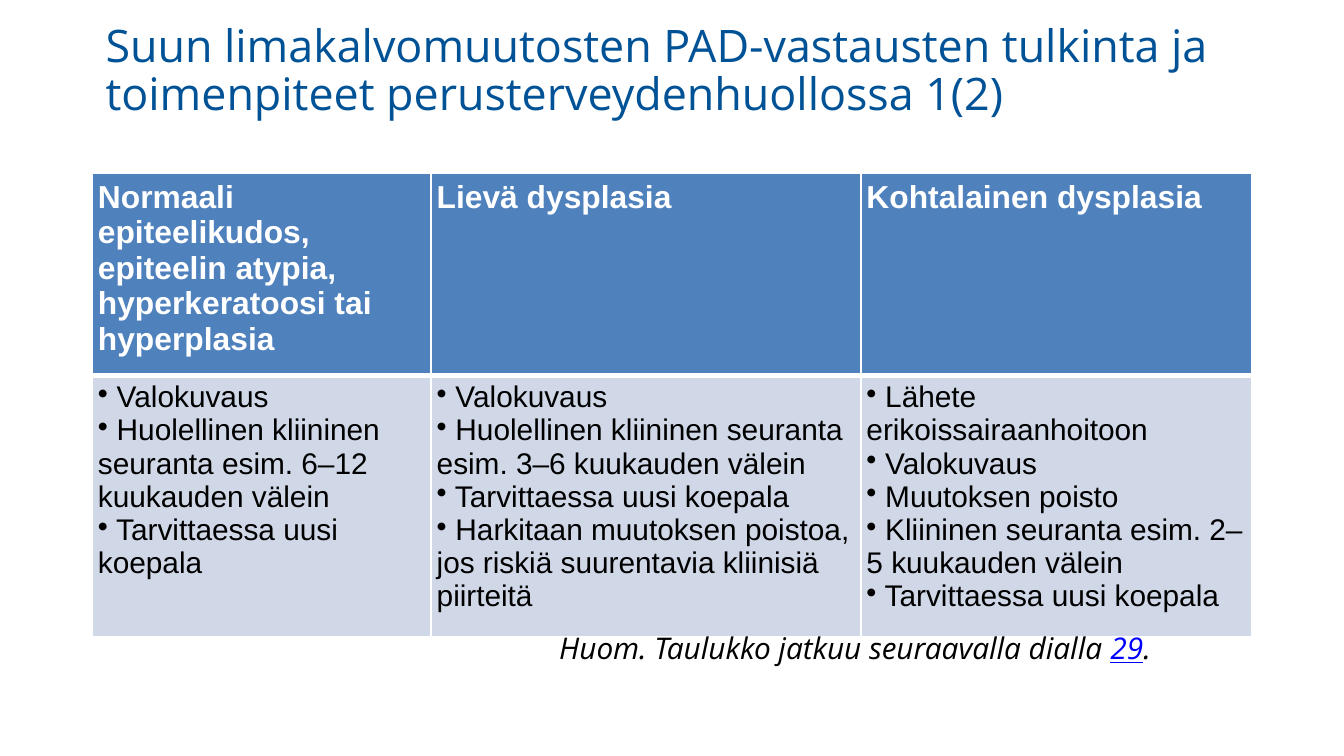
from dataclasses import dataclass

from lxml.etree import SubElement
from pptx import Presentation
from pptx.dml.color import RGBColor as RGB
from pptx.oxml.ns import qn
from pptx.util import Emu, Pt

PX = 9525  # EMU per px, at 96 px to the inch


def px(n):
    return Emu(n * PX)


@dataclass(frozen=True)
class Theme:
    heading_font: str = "Open Sans"
    table_font: str = "Arial"
    title: str = "005296"
    text: str = "000000"
    link: str = "0000FF"
    white: str = "FFFFFF"
    header_fill: str = "4F81BD"
    body_fill: str = "D0D8E8"
    title_size: int = 24
    header_size: int = 17
    body_size: int = 16


class Deck:
    def __init__(self, theme, width, height):
        self.theme = theme
        self.prs = Presentation()
        self.prs.slide_width, self.prs.slide_height = px(width), px(height)
        self.s = self.prs.slides.add_slide(self.prs.slide_layouts[6])

    def run(self, p, text, font, size, color, bold=False, italic=False, underline=False):
        r = p.add_run()
        r.text = text
        f = r.font
        f.name, f.size, f.color.rgb = font, Pt(size), RGB.from_string(color)
        f.bold, f.italic, f.underline = bold, italic, underline

    def text_box(self, x, y, w, h):
        """Add a wrapping text box and return its first paragraph."""
        tf = self.s.shapes.add_textbox(px(x), px(y), px(w), px(h)).text_frame
        tf.word_wrap = True
        return tf.paragraphs[0]

    def bullet(self, p):
        """Give a paragraph a bullet that wraps back to the margin."""
        pPr = p._p.get_or_add_pPr()
        pPr.set("marL", "0")
        pPr.set("indent", "0")
        SubElement(pPr, qn("a:buChar"), char="•")

    def borders(self, cell, top, bottom):
        tcPr = cell._tc.get_or_add_tcPr()
        for side, width in (("L", 1), ("R", 1), ("T", top), ("B", bottom)):
            ln = SubElement(tcPr, qn(f"a:ln{side}"), w=str(Pt(width)))
            fill = SubElement(ln, qn("a:solidFill"))
            SubElement(fill, qn("a:srgbClr"), val=self.theme.white)

    def cell(self, cell, lines, header):
        t = self.theme
        self.borders(cell, *((1, 3) if header else (3, 1)))
        cell.fill.solid()
        cell.fill.fore_color.rgb = RGB.from_string(t.header_fill if header else t.body_fill)
        cell.margin_left = cell.margin_right = px(4)
        cell.margin_top = cell.margin_bottom = px(4)
        tf = cell.text_frame
        for i, line in enumerate(lines):
            p = tf.add_paragraph() if i else tf.paragraphs[0]
            if header:
                self.run(p, line, t.table_font, t.header_size, t.white, bold=True)
            else:
                self.bullet(p)
                self.run(p, f" {line}", t.table_font, t.body_size, t.text)

    def table(self, x, y, widths, heights, columns):
        """Draw a table from a mapping of column heading to bullet lines."""
        frame = self.s.shapes.add_table(len(heights), len(widths), px(x), px(y),
                                        px(sum(widths)), px(sum(heights)))
        table = frame.table
        table.horz_banding = False
        for row, height in zip(table.rows, heights):
            row.height = px(height)
        for i, (heading, lines) in enumerate(columns.items()):
            table.columns[i].width = px(widths[i])
            self.cell(table.cell(0, i), [heading], header=True)
            self.cell(table.cell(1, i), lines, header=False)


PHOTO = "Valokuvaus"
BIOPSY = "Tarvittaessa uusi koepala"
FOLLOW_UP = "Huolellinen kliininen seuranta esim. {} kuukauden välein"

FINDINGS = {
    "Normaali epiteelikudos, epiteelin atypia, hyperkeratoosi tai hyperplasia": [
        PHOTO, FOLLOW_UP.format("6–12"), BIOPSY],
    "Lievä dysplasia": [
        PHOTO, FOLLOW_UP.format("3–6"), BIOPSY,
        "Harkitaan muutoksen poistoa, jos riskiä suurentavia kliinisiä piirteitä"],
    "Kohtalainen dysplasia": [
        "Lähete erikoissairaanhoitoon", PHOTO, "Muutoksen poisto",
        "Kliininen seuranta esim. 2–5 kuukauden välein", BIOPSY],
}


def main():
    t = Theme()
    deck = Deck(t, 960, 540)

    title = deck.text_box(66, 12, 828, 87)
    title.line_spacing = 0.9
    deck.run(title, "Suun limakalvomuutosten PAD-vastausten tulkinta ja "
             "toimenpiteet perusterveydenhuollossa 1(2)",
             t.heading_font, t.title_size, t.title)

    deck.table(66, 124, [242, 307, 279], [125, 173], FINDINGS)

    note = deck.text_box(390, 445, 501, 36)
    for text, color, underline in (
            ("Huom. Taulukko jatkuu seuraavalla dialla ", t.text, False),
            ("29", t.link, True),
            (".", t.text, False)):
        deck.run(note, text, t.heading_font, t.body_size, color,
                 italic=True, underline=underline)

    deck.prs.save("out.pptx")


if __name__ == "__main__":
    main()
